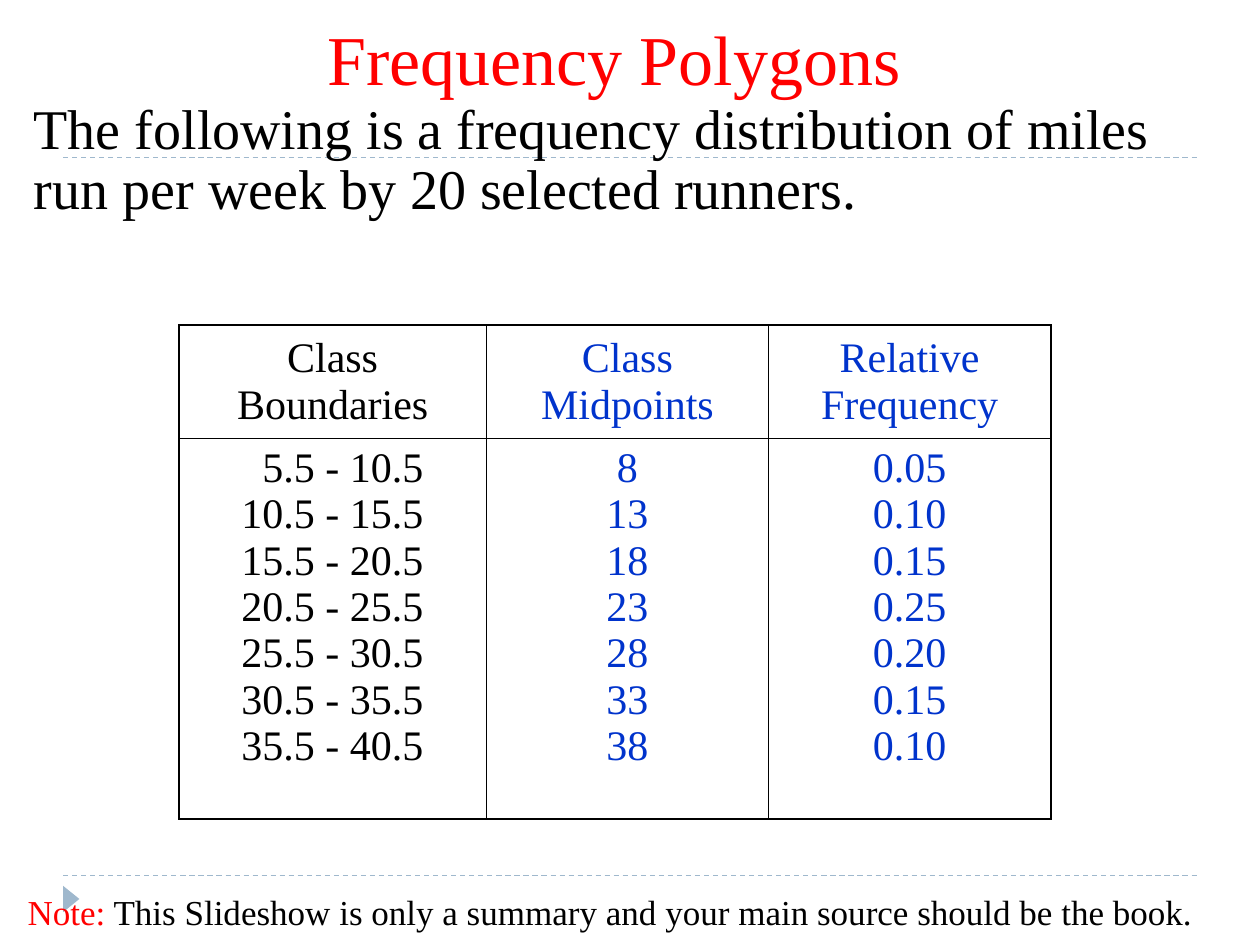
from lxml import etree
from pptx import Presentation
from pptx.dml.color import RGBColor
from pptx.enum.dml import MSO_LINE
from pptx.enum.shapes import MSO_CONNECTOR, MSO_SHAPE
from pptx.enum.text import MSO_ANCHOR, PP_ALIGN
from pptx.oxml.ns import qn
from pptx.util import Inches, Pt

DASH = MSO_LINE.DASH
STRAIGHT = MSO_CONNECTOR.STRAIGHT
TRIANGLE = MSO_SHAPE.ISOSCELES_TRIANGLE
TOP, MIDDLE, BOTTOM = MSO_ANCHOR.TOP, MSO_ANCHOR.MIDDLE, MSO_ANCHOR.BOTTOM
LEFT, CENTER, RIGHT = PP_ALIGN.LEFT, PP_ALIGN.CENTER, PP_ALIGN.RIGHT

COLORS = {"accent": "9FB8CD", "red": "FF0000", "black": "000000", "blue": "0033CC"}
FONT = "Times New Roman"

COLUMNS = [
    {"head": "Class Boundaries", "width": 2.44, "color": "black",
     "align": RIGHT, "margin": 0.5,
     "values": [f"{low}.5 - {low + 5}.5" for low in range(5, 40, 5)]},
    {"head": "Class Midpoints", "width": 2.24, "color": "blue",
     "align": CENTER, "margin": 0.1,
     "values": [str(mid) for mid in range(8, 40, 5)]},
    {"head": "Relative Frequency", "width": 2.24, "color": "blue",
     "align": CENTER, "margin": 0.1,
     "values": ["0.05", "0.10", "0.15", "0.25", "0.20", "0.15", "0.10"]},
]
ROW_HEIGHTS = [0.84, 3.02]


def rgb(name):
    return RGBColor.from_string(COLORS[name])


def add_run(p, text, size, color):
    r = p.add_run()
    r.text = text
    for name, value in {"name": FONT, "size": Pt(size)}.items():
        setattr(r.font, name, value)
    r.font.color.rgb = rgb(color)


def add_text(s, box, runs, size, **formats):
    tf = s.shapes.add_textbox(*map(Inches, box)).text_frame
    tf.word_wrap = True
    tf.vertical_anchor = formats.pop("anchor", TOP)
    p = tf.paragraphs[0]
    for name, value in formats.items():
        setattr(p, name, value)
    for text, color in runs:
        add_run(p, text, size, color)


def add_rule(s, left, top, width):
    line = s.shapes.add_connector(STRAIGHT, Inches(left), Inches(top),
                                  Inches(left + width), Inches(top))
    for name, value in {"width": Pt(0.75), "dash_style": DASH}.items():
        setattr(line.line, name, value)
    line.line.color.rgb = rgb("accent")
    etree.SubElement(line._element.spPr, qn("a:effectLst"))


def add_decoration(s, left, top, width, height):
    # Dashed rules above and below the content, with a marker under the lower one
    for y in (top, top + height):
        add_rule(s, left, y, width)
    sp = s.shapes.add_shape(TRIANGLE, Inches(left - 0.04), Inches(top + height + 0.12),
                            Inches(0.21), Inches(0.13))
    sp.rotation = 90
    sp.shadow.inherit = False
    sp.fill.solid()
    sp.fill.fore_color.rgb = rgb("accent")
    sp.line.fill.background()


def add_borders(cell):
    tc_pr = cell._tc.get_or_add_tcPr()
    for i, side in enumerate(("lnL", "lnR", "lnT", "lnB")):
        ln = etree.Element(qn(f"a:{side}"), w=str(Pt(1)))
        fill = etree.SubElement(ln, qn("a:solidFill"))
        etree.SubElement(fill, qn("a:srgbClr"), val=COLORS["black"])
        tc_pr.insert(i, ln)


def fill_cell(cell, lines, color, align, anchor):
    cell.fill.background()
    cell.vertical_anchor = anchor
    add_borders(cell)
    tf = cell.text_frame
    for i, line in enumerate(lines):
        p = tf.add_paragraph() if i else tf.paragraphs[0]
        p.alignment = align
        add_run(p, line, 24, color)


def add_frequency_table(s, left, top):
    width = sum(col["width"] for col in COLUMNS)
    table = s.shapes.add_table(len(ROW_HEIGHTS), len(COLUMNS), Inches(left), Inches(top),
                               Inches(width), Inches(sum(ROW_HEIGHTS))).table
    for row, height in zip(table.rows, ROW_HEIGHTS):
        row.height = Inches(height)
    for i, col in enumerate(COLUMNS):
        table.columns[i].width = Inches(col["width"])
        head, body = table.cell(0, i), table.cell(1, i)
        fill_cell(head, [col["head"]], col["color"], CENTER, MIDDLE)
        fill_cell(body, col["values"], col["color"], col["align"], TOP)
        body.margin_right = Inches(col["margin"])


def main():
    prs = Presentation()
    prs.slide_width, prs.slide_height = Inches(10), Inches(7.5)
    s = prs.slides.add_slide(prs.slide_layouts[6])

    add_decoration(s, 0.5, 1.25, 9, 5.7)
    # Title
    add_text(s, (2.5, -0.08, 5.75, 0.92), [("Frequency Polygons", "red")], 40,
             anchor=BOTTOM, alignment=LEFT)
    add_frequency_table(s, 1.42, 2.58)
    # Introduction
    add_text(s, (0.17, 0.75, 9.58, 1.08),
             [("The following is a frequency distribution of miles run per week "
               "by 20 selected runners.", "black")], 32, line_spacing=0.9)
    # Footnote
    add_text(s, (0.12, 7.02, 9.75, 0.44),
             [("Note:", "red"),
              (" This Slideshow is only a summary and your main source "
               "should be the book.", "black")], 20)

    prs.save("out.pptx")


if __name__ == "__main__":
    main()
